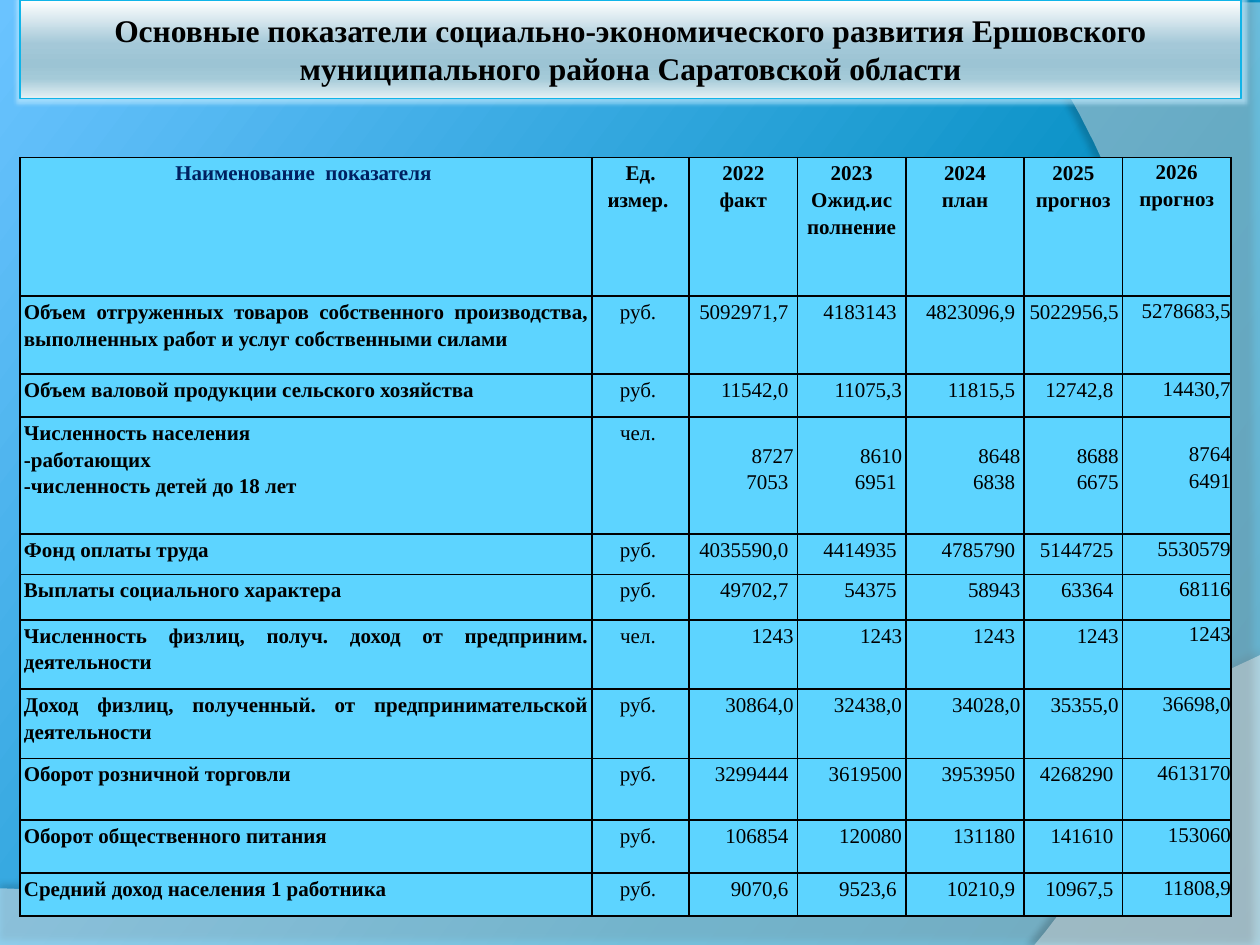
from lxml.etree import SubElement
from pptx import Presentation
from pptx.dml.color import RGBColor
from pptx.enum.text import MSO_ANCHOR as Anchor, PP_ALIGN as Align
from pptx.oxml.ns import qn
from pptx.util import Inches, Pt

FONT = "Times New Roman"
TITLE = ("Основные показатели социально-экономического развития "
         "Ершовского муниципального района Саратовской области")
COLUMN_WIDTHS = [4.54, 0.77, 0.86, 0.86, 0.94, 0.78, 0.86]
ROW_HEIGHTS = [1.1, 0.62, 0.34, 0.93, 0.32, 0.36, 0.55, 0.55, 0.49, 0.42, 0.34]
POPULATION_ROW = 3
HEADER = ["Наименование  показателя ", "Ед. измер. ", "2022\nфакт",
          "2023\nОжид.ис\nполнение", "2024\nплан", "2025\nпрогноз", "2026\nпрогноз"]
INDICATORS = [
    ["Объем отгруженных товаров собственного производства, выполненных работ "
     "и услуг собственными силами ", "руб. ",
     "5092971,7 ", "4183143 ", "4823096,9 ", "5022956,5", "5278683,5"],
    ["Объем валовой продукции сельского хозяйства ", "руб. ",
     "11542,0 ", "11075,3", "11815,5 ", "12742,8 ", "14430,7"],
    ["Численность населения\n-работающих\n-численность детей до 18 лет ", "чел. ",
     "8727\n7053 ", "8610\n6951 ", "8648\n6838 ", "8688\n6675", "8764\n6491"],
    ["Фонд оплаты труда ", "руб. ",
     "4035590,0 ", "4414935 ", "4785790 ", "5144725 ", "5530579"],
    ["Выплаты социального характера ", "руб. ",
     "49702,7 ", "54375 ", "58943", "63364 ", "68116"],
    ["Численность физлиц, получ. доход от предприним. деятельности ", "чел. ",
     "1243", "1243", "1243 ", "1243", "1243"],
    ["Доход физлиц, полученный. от предпринимательской деятельности ", "руб. ",
     "30864,0", "32438,0", "34028,0", "35355,0", "36698,0"],
    ["Оборот розничной торговли ", "руб. ",
     "3299444 ", "3619500", "3953950 ", "4268290 ", "4613170"],
    ["Оборот общественного питания ", "руб. ",
     "106854 ", "120080", "131180 ", "141610 ", "153060"],
    ["Средний доход населения 1 работника", "руб. ",
     "9070,6 ", "9523,6 ", "10210,9 ", "10967,5 ", "11808,9"],
]


def color(value):
    return RGBColor.from_string(value)


def set_attributes(target, values):
    for name, value in values.items():
        setattr(target, name, value)


def add_xml_color(parent, value, alpha=100):
    element = SubElement(parent, qn("a:srgbClr"), val=value)
    if alpha < 100:
        SubElement(element, qn("a:alpha"), val=str(alpha * 1000))


def set_gradient(fill, stops, angle):
    """Fill with (percent, colour) stops; the angle runs clockwise."""
    fill.gradient()
    fill.gradient_angle = 360 - angle
    stop_list = fill._fill._gradFill.find(qn("a:gsLst"))
    for stop in list(stop_list):
        stop_list.remove(stop)
    for position, value in stops:
        add_xml_color(SubElement(stop_list, qn("a:gs"), pos=str(position * 1000)), value)


def add_effect(shape, kind, value, alpha, **attributes):
    properties = shape._element.spPr
    effects = properties.find(qn("a:effectLst"))
    if effects is None:
        effects = SubElement(properties, qn("a:effectLst"))
    texts = {name: str(int(number)) for name, number in attributes.items()}
    add_xml_color(SubElement(effects, qn(kind), texts), value, alpha)


def curve(start, control_1, control_2, end, steps=40):
    """Points of a cubic Bezier curve after its start."""
    points = []
    for step in range(1, steps + 1):
        t = step / steps
        weights = ((1 - t) ** 3, 3 * t * (1 - t) ** 2, 3 * t * t * (1 - t), t ** 3)
        corners = zip(start, control_1, control_2, end)
        points.append(tuple(sum(w * c for w, c in zip(weights, axis)) for axis in
                            zip(start, control_1, control_2, end)))
    return points


def add_wave(slide, points, alpha, shadow_alpha, distance, direction):
    corners = [(Inches(x), Inches(y)) for x, y in points]
    builder = slide.shapes.build_freeform(*corners[0], scale=1.0)
    builder.add_line_segments(corners[1:], close=True)
    wave = builder.convert_to_shape()
    wave.shadow.inherit = False
    wave.line.fill.background()
    wave.fill.solid()
    wave.fill.fore_color.rgb = color("FFFFFF")
    solid = wave._element.spPr.find(qn("a:solidFill"))
    SubElement(solid[0], qn("a:alpha"), val=str(alpha * 1000))
    add_effect(wave, "a:outerShdw", "000000", shadow_alpha,
               blurRad=Pt(4), dist=Pt(distance), dir=direction * 60000)


def write_text(frame, text, size, bold, value, alignment, spacing=None):
    frame.text = text
    for paragraph in frame.paragraphs:
        set_attributes(paragraph, {"alignment": alignment, "line_spacing": spacing})
        for run in paragraph.runs:
            set_attributes(run.font, {"name": FONT, "size": Pt(size), "bold": bold})
            run.font.color.rgb = color(value)


def format_title(title):
    set_attributes(title, {"left": Inches(0.16), "top": Inches(0),
                           "width": Inches(9.69), "height": Inches(0.78)})
    margins = {f"margin_{side}": Inches(0.05) for side in ("left", "top", "right", "bottom")}
    set_attributes(title.text_frame, {"word_wrap": True, "vertical_anchor": Anchor.MIDDLE,
                                      **margins})
    write_text(title.text_frame, TITLE, 18, True, "000000", Align.CENTER)
    set_gradient(title.fill, [(0, "FFFFFF"), (45, "A4C8D8"), (65, "9CC4D4"),
                              (80, "A4CAD8"), (100, "E4F0F4")], 90)
    title.line.color.rgb = color("10B4E8")
    title.line.width = Pt(0.75)
    add_effect(title, "a:glow", "C4ECFF", 60, rad=Pt(5))


def add_borders(cell):
    properties = cell._tc.get_or_add_tcPr()
    for index, side in enumerate(("lnL", "lnR", "lnT", "lnB")):
        line = properties.makeelement(qn(f"a:{side}"), {"w": str(Pt(1))})
        properties.insert(index, line)
        add_xml_color(SubElement(line, qn("a:solidFill")), "000000")


def format_cell(cell, text, row, column):
    is_header, is_last = row == 0, column == len(COLUMN_WIDTHS) - 1
    if is_header or column == 1:
        alignment = Align.CENTER
    else:
        alignment = Align.JUSTIFY if column == 0 else Align.RIGHT
    side, top = (0, 0) if is_last else (0.03, 0.01)
    if row == POPULATION_ROW and column > 1:
        top += 0.18  # the figures stand beside the second and third lines
    set_attributes(cell, {"margin_left": Inches(side), "margin_right": Inches(side),
                          "margin_top": Inches(top), "margin_bottom": 0,
                          "vertical_anchor": Anchor.TOP})
    value = "002060" if is_header and column == 0 else "000000"
    write_text(cell.text_frame, text, 12, is_header or column == 0, value, alignment, 1.15)
    cell.fill.solid()
    cell.fill.fore_color.rgb = color("5DD4FF")
    add_borders(cell)


def add_indicator_table(slide):
    rows = [HEADER] + INDICATORS
    table = slide.shapes.add_table(len(rows), len(HEADER), Inches(0.16), Inches(1.25),
                                   Inches(9.61), Inches(6.02)).table
    for column, width in zip(table.columns, COLUMN_WIDTHS):
        column.width = Inches(width)
    for row, height in zip(table.rows, ROW_HEIGHTS):
        row.height = Inches(height)
    for row, texts in enumerate(rows):
        for column, text in enumerate(texts):
            format_cell(table.cell(row, column), text, row, column)


def main():
    presentation = Presentation()
    presentation.slide_width, presentation.slide_height = Inches(10), Inches(7.5)
    slide = presentation.slides.add_slide(presentation.slide_layouts[5])
    title = slide.shapes.title

    # Background with two translucent waves
    set_gradient(slide.background.fill,
                 [(0, "0076A1"), (30, "008DC0"), (100, "6AC3FF")], 217)
    add_wave(slide, [(0, 7.05), (0, 7.5), (10, 7.5), (10, 5.2)]
             + curve((10, 5.2), (5.59, 7.29), (3.91, 7.19), (0, 7.05)), 45, 35, 3.5, 270)
    add_wave(slide, [(10, 0.02), (10, 7.5), (8.21, 7.5)]
             + curve((8.21, 7.5), (9.35, 6.19), (10.18, 3), (8, 0)), 40, 45, 4, 180)

    # Title in front of the waves, then the table
    slide.shapes._spTree.append(title._element)
    format_title(title)
    add_indicator_table(slide)
    presentation.save("out.pptx")


if __name__ == "__main__":
    main()
